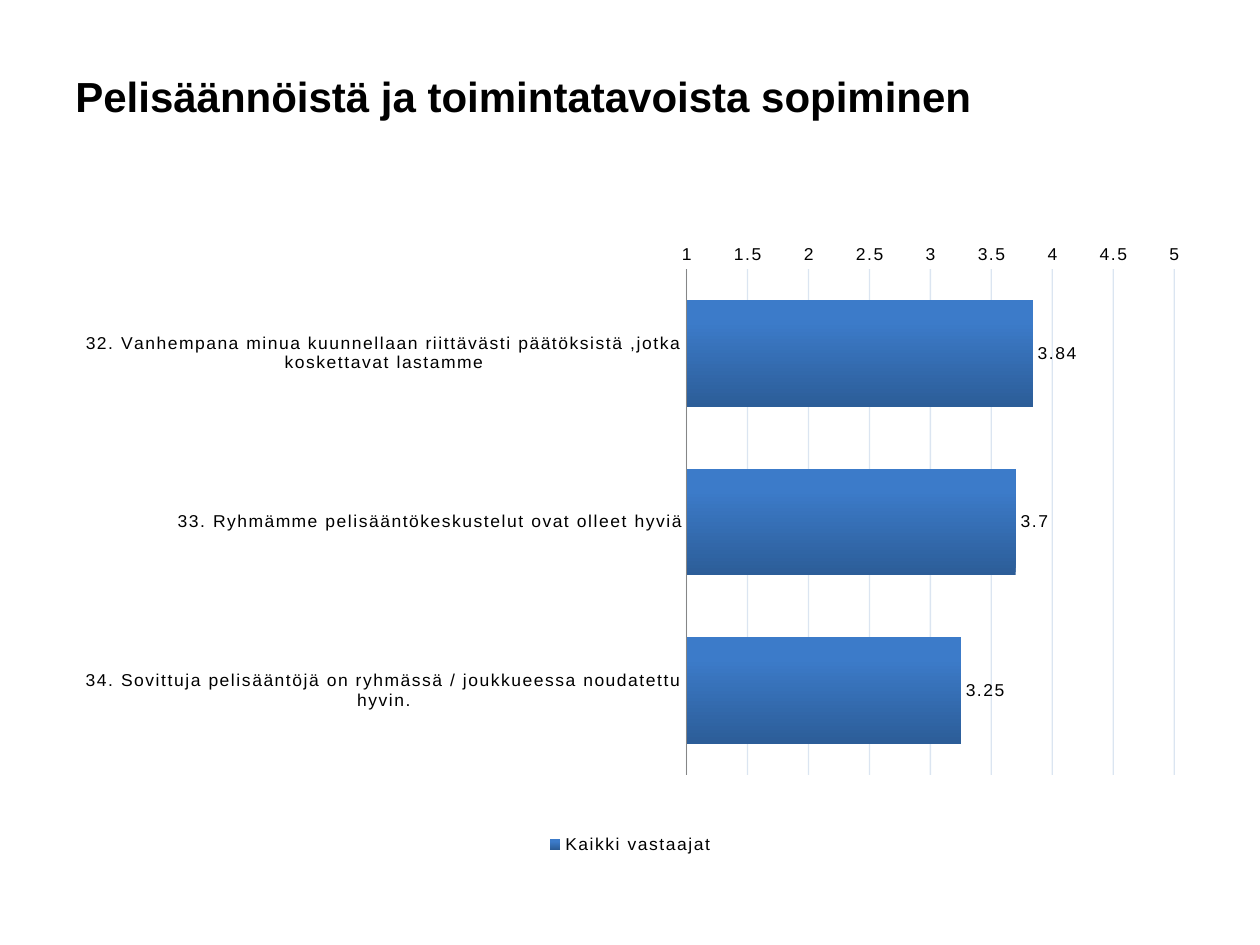
from lxml.etree import SubElement
from pptx import Presentation
from pptx.chart.data import CategoryChartData
from pptx.dml.color import RGBColor
from pptx.enum.chart import (
    XL_AXIS_CROSSES as Crosses,
    XL_CHART_TYPE as ChartType,
    XL_LABEL_POSITION as LabelPosition,
    XL_LEGEND_POSITION as LegendPosition,
    XL_TICK_MARK as TickMark,
)
from pptx.enum.text import MSO_ANCHOR as Anchor
from pptx.oxml.ns import qn
from pptx.util import Pt

TITLE = "Pelisäännöistä ja toimintatavoista sopiminen"
SERIES = "Kaikki vastaajat"
RATINGS = [
    ("32. Vanhempana minua kuunnellaan riittävästi päätöksistä ,jotka koskettavat lastamme", 3.84),
    ("33. Ryhmämme pelisääntökeskustelut ovat olleet hyviä", 3.7),
    ("34. Sovittuja pelisääntöjä on ryhmässä / joukkueessa noudatettu hyvin.", 3.25),
]
SCALE = {"minimum_scale": 1, "maximum_scale": 5, "major_unit": 0.5}
PLOT_AREA = {"x": 0.55, "y": 0.02, "w": 0.43, "h": 0.84}
MARGIN, CONTENT_WIDTH = 36, 648
THEME = {
    "font": "Arial",
    "title_size": 24,
    "chart_size": 10,
    "letter_spacing": 1,
    "text": RGBColor(0, 0, 0),
    "bar_bottom": RGBColor(0x2C, 0x5D, 0x98),
    "bar_top": RGBColor(0x3C, 0x7B, 0xC9),
    "grid": RGBColor(0x4F, 0x81, 0xBD),
    "axis": RGBColor(0x86, 0x86, 0x86),
}


def style_font(font, size, bold=False):
    font.name = THEME["font"]
    font.size = Pt(size)
    font.bold = bold
    font.color.rgb = THEME["text"]


def add_title(slide):
    box = slide.shapes.add_textbox(Pt(MARGIN), Pt(26), Pt(CONTENT_WIDTH), Pt(57))
    frame = box.text_frame
    frame.word_wrap = True
    frame.vertical_anchor = Anchor.MIDDLE
    frame.text = TITLE
    style_font(frame.paragraphs[0].runs[0].font, THEME["title_size"], bold=True)


def style_axes(chart):
    category_axis, value_axis = chart.category_axis, chart.value_axis
    for axis in (category_axis, value_axis):
        axis.major_tick_mark = axis.minor_tick_mark = TickMark.NONE
        style_font(axis.tick_labels.font, THEME["chart_size"])
    category_axis.reverse_order = True
    category_axis.crosses = Crosses.MAXIMUM
    category_axis.format.line.color.rgb = THEME["axis"]
    category_axis.format.line.width = Pt(0.75)
    for name, value in SCALE.items():
        setattr(value_axis, name, value)
    value_axis.tick_labels.number_format = "General"
    value_axis.tick_labels.number_format_is_linked = False
    value_axis.format.line.fill.background()
    gridlines = value_axis.major_gridlines
    gridlines.format.line.color.rgb = THEME["grid"]
    gridlines.format.line.width = Pt(0.75)


def style_bars(plot):
    plot.gap_width = 58
    plot.vary_by_categories = False
    series = plot.series[0]
    series.invert_if_negative = False
    fill = series.format.fill
    fill.gradient()
    fill.gradient_angle = 90
    stops = zip(fill.gradient_stops, ("bar_bottom", "bar_top"), (0, 0.8))
    for stop, color, position in stops:
        stop.color.rgb = THEME[color]
        stop.position = position
    labels = plot.series[0].data_labels
    labels.show_value = True
    labels.position = LabelPosition.OUTSIDE_END
    style_font(labels.font, THEME["chart_size"])


def place_plot(chart_space):
    plot_area = next(chart_space.iter(qn("c:plotArea")))
    layout = plot_area.find(qn("c:layout"))
    if layout is None:
        layout = SubElement(plot_area, qn("c:layout"))
        plot_area.insert(0, layout)
    manual = SubElement(layout, qn("c:manualLayout"))
    SubElement(manual, qn("c:layoutTarget"), val="inner")
    for side in "xy":
        SubElement(manual, qn(f"c:{side}Mode"), val="edge")
    for side, share in PLOT_AREA.items():
        SubElement(manual, qn(f"c:{side}"), val=str(share))


def refine_chart(chart_space):
    place_plot(chart_space)
    for gridlines in chart_space.iter(qn("c:majorGridlines")):
        for color in gridlines.iter(qn("a:srgbClr")):
            SubElement(color, qn("a:alpha"), val="20000")
    for properties in chart_space.iter(qn("a:defRPr")):
        properties.set("spc", str(THEME["letter_spacing"] * 100))


def add_ratings_chart(slide):
    data = CategoryChartData(number_format="General")
    data.categories = [question for question, rating in RATINGS]
    data.add_series(SERIES, [rating for question, rating in RATINGS])
    chart = slide.shapes.add_chart(
        ChartType.BAR_CLUSTERED, Pt(MARGIN), Pt(140), Pt(CONTENT_WIDTH), Pt(351), data
    ).chart
    chart.has_title = False
    style_font(chart.font, THEME["chart_size"])
    chart.has_legend = True
    chart.legend.position = LegendPosition.BOTTOM
    chart.legend.include_in_layout = False
    style_font(chart.legend.font, THEME["chart_size"])
    style_axes(chart)
    style_bars(chart.plots[0])
    refine_chart(chart._chartSpace)


def main():
    """Build the slide with the ratings on agreeing rules and practices."""
    presentation = Presentation()
    presentation.slide_width, presentation.slide_height = Pt(720), Pt(540)
    slide = presentation.slides.add_slide(presentation.slide_layouts[6])
    add_title(slide)
    add_ratings_chart(slide)
    presentation.save("out.pptx")


if __name__ == "__main__":
    main()
